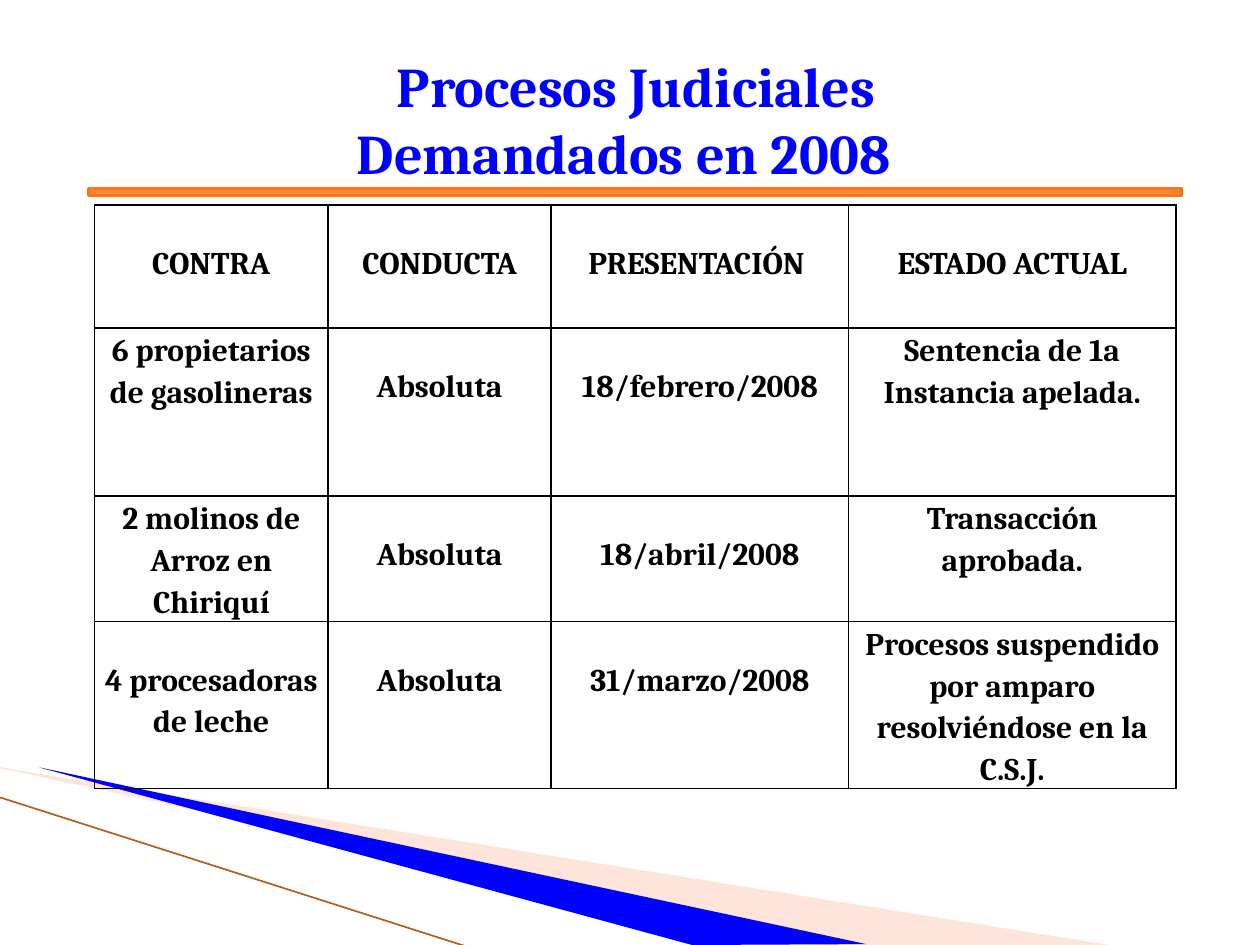
from dataclasses import dataclass

from lxml.etree import SubElement
from pptx import Presentation
from pptx.dml.color import RGBColor
from pptx.enum.shapes import MSO_CONNECTOR, MSO_SHAPE
from pptx.enum.text import MSO_ANCHOR, MSO_AUTO_SIZE, PP_ALIGN
from pptx.oxml.ns import qn
from pptx.util import Pt

COLORS = {
    "blue": "0000FF",
    "peach": "FFBCA5",
    "peach_edge": "FFE7D7",
    "brown": "B35E1A",
    "orange": "FE8637",
    "orange_edge": "FF7415",
    "black": "000000",
}
FONT = "Cambria"
LOWERED = 20.5


@dataclass
class Wedge:
    points: list[tuple[float, float]]
    fill: str
    edge: str | None = None
    opacity: int = 100


@dataclass
class Entry:
    text: str
    margin_top: float = 0


WEDGES = [
    Wedge([(0, 439), (632, 540), (469.5, 540), (0, 438.5)], "peach", "peach_edge", 40),
    Wedge([(22.5, 438.5), (495, 539.5), (395.5, 540), (24, 439)], "blue"),
]
COLUMN_WIDTHS = [133.5, 127.5, 170, 187]
ROW_HEIGHTS = [70.5, 96, 65.5, 79]
ROWS = [
    [Entry(heading, LOWERED)
     for heading in ("CONTRA", "CONDUCTA", "PRESENTACIÓN ", "ESTADO ACTUAL")],
    [Entry("6 propietarios de gasolineras"), Entry("Absoluta", LOWERED),
     Entry("18/febrero/2008", LOWERED), Entry("Sentencia de 1a Instancia apelada.")],
    [Entry("2 molinos de Arroz en Chiriquí"), Entry("Absoluta", LOWERED),
     Entry("18/abril/2008", LOWERED), Entry("Transacción aprobada.")],
    [Entry("4 procesadoras de leche", LOWERED), Entry("Absoluta", LOWERED),
     Entry("31/marzo/2008", LOWERED),
     Entry("Procesos suspendido por amparo resolviéndose en la C.S.J.")],
]


def color(name: str) -> RGBColor:
    return RGBColor.from_string(COLORS[name])


def format_paragraph(paragraph, size: float, color_name: str) -> None:
    paragraph.alignment = PP_ALIGN.CENTER
    paragraph.font.name = FONT
    paragraph.font.size = Pt(size)
    paragraph.font.bold = True
    paragraph.font.color.rgb = color(color_name)


def paint(shape, fill: str, edge: str | None, width: float) -> None:
    shape.shadow.inherit = False
    shape.fill.solid()
    shape.fill.fore_color.rgb = color(fill)
    if edge is None:
        shape.line.fill.background()
    else:
        shape.line.color.rgb = color(edge)
        shape.line.width = Pt(width)


def draw_wedge(slide, wedge: Wedge) -> None:
    points = [(Pt(x), Pt(y)) for x, y in wedge.points]
    builder = slide.shapes.build_freeform(*points[0])
    builder.add_line_segments(points[1:], close=True)
    shape = builder.convert_to_shape()
    paint(shape, wedge.fill, wedge.edge, 0.75)
    if wedge.opacity < 100:
        fill_color = shape.element.spPr.find(qn("a:solidFill"))[0]
        SubElement(fill_color, qn("a:alpha"), val=str(wedge.opacity * 1000))


def draw_decoration(slide) -> None:
    for wedge in WEDGES:
        draw_wedge(slide, wedge)
    line = slide.shapes.add_connector(
        MSO_CONNECTOR.STRAIGHT, Pt(-0.5), Pt(455.5), Pt(267), Pt(541))
    line.line.color.rgb = color("brown")
    line.line.width = Pt(0.95)
    SubElement(line.element.spPr, qn("a:effectLst"))
    bar = slide.shapes.add_shape(
        MSO_SHAPE.MATH_MINUS, Pt(-62), Pt(101.5), Pt(849.5), Pt(16.5))
    paint(bar, "orange", "orange_edge", 2)


def draw_title(slide) -> None:
    title = slide.shapes.title
    title.left, title.top = Pt(48), Pt(23)
    title.width, title.height = Pt(624), Pt(90)
    frame = title.text_frame
    frame.text = " Procesos Judiciales\vDemandados en 2008 "
    frame.auto_size = MSO_AUTO_SIZE.NONE
    frame.vertical_anchor = MSO_ANCHOR.MIDDLE
    format_paragraph(frame.paragraphs[0], 32, "blue")


def add_borders(cell) -> None:
    properties = cell._tc.get_or_add_tcPr()
    for position, side in enumerate(("a:lnL", "a:lnR", "a:lnT", "a:lnB")):
        border = SubElement(properties, qn(side), w=str(Pt(1)))
        fill = SubElement(border, qn("a:solidFill"))
        SubElement(fill, qn("a:srgbClr"), val=COLORS["black"])
        properties.insert(position, border)


def fill_cell(cell, entry: Entry) -> None:
    cell.fill.background()
    add_borders(cell)
    cell.margin_left = cell.margin_right = Pt(5)
    cell.margin_top, cell.margin_bottom = Pt(entry.margin_top), Pt(0)
    cell.vertical_anchor = MSO_ANCHOR.TOP
    cell.text = entry.text
    paragraph = cell.text_frame.paragraphs[0]
    paragraph.line_spacing = 1.15
    format_paragraph(paragraph, 18, "black")


def draw_table(slide) -> None:
    table = slide.shapes.add_table(
        len(ROWS), len(COLUMN_WIDTHS), Pt(54), Pt(117),
        Pt(sum(COLUMN_WIDTHS)), Pt(sum(ROW_HEIGHTS))).table
    table.first_row = table.horz_banding = False
    for column, width in zip(table.columns, COLUMN_WIDTHS):
        column.width = Pt(width)
    for row, height, entries in zip(table.rows, ROW_HEIGHTS, ROWS):
        row.height = Pt(height)
        for cell, entry in zip(row.cells, entries):
            fill_cell(cell, entry)


def main() -> None:
    presentation = Presentation()
    presentation.slide_width, presentation.slide_height = Pt(720), Pt(540)
    slide = presentation.slides.add_slide(presentation.slide_layouts[5])
    draw_decoration(slide)
    draw_title(slide)
    draw_table(slide)
    presentation.save("out.pptx")


if __name__ == "__main__":
    main()
